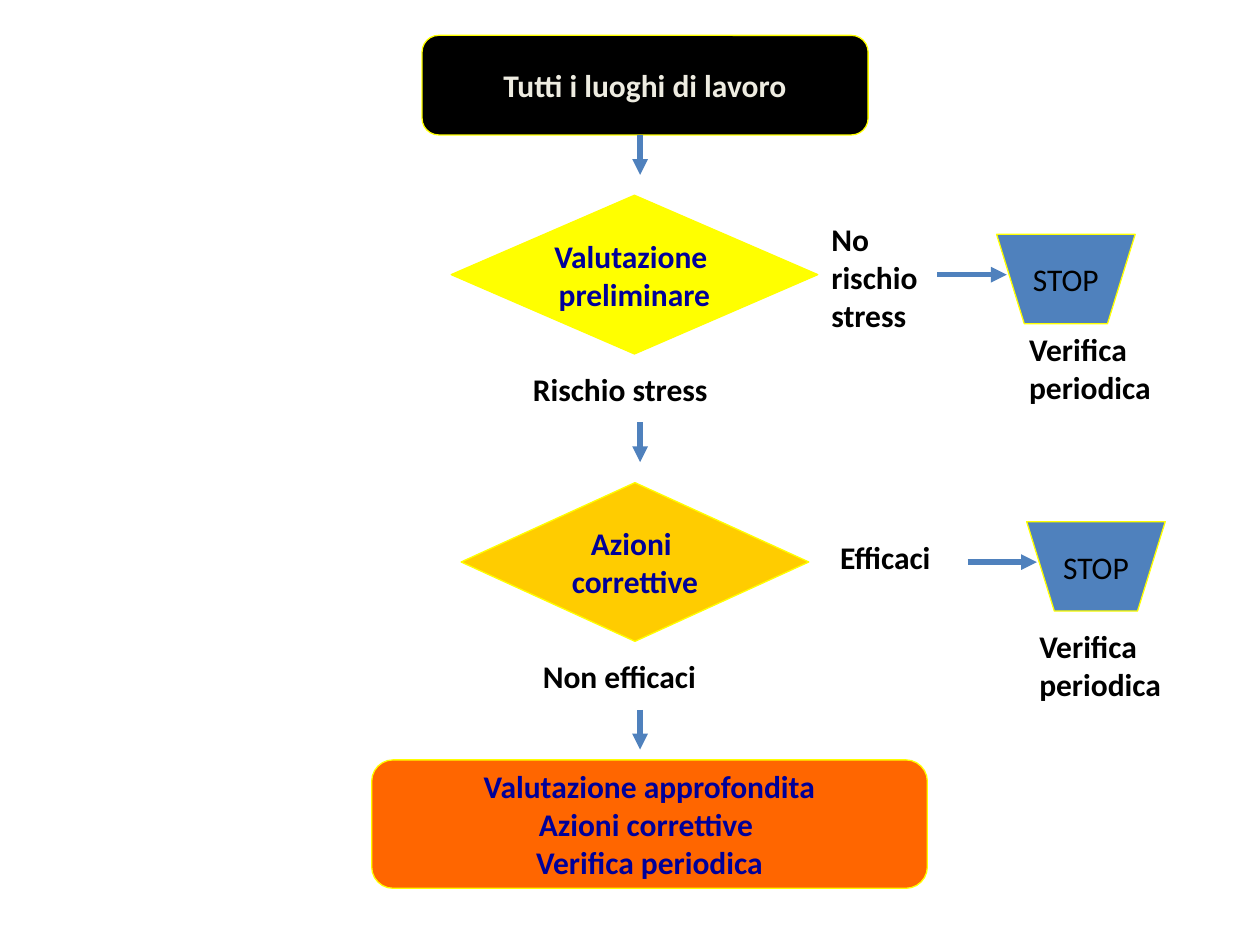
from lxml import etree
from pptx import Presentation
from pptx.dml.color import RGBColor
from pptx.enum.shapes import MSO_CONNECTOR as Connector, MSO_SHAPE as Shape
from pptx.enum.text import MSO_ANCHOR as Anchor, PP_ALIGN as Align
from pptx.oxml.ns import qn
from pptx.util import Pt

BLUE, YELLOW, NAVY, BLACK = "4F81BD", "FFFF00", "000099", "000000"
ROW_STEP = 164.2    # vertical distance between decision rows
ARROW_X = 365.8     # axis of the downward arrows
STOP_SHIFT = 17.2   # the second stop sits further right


def color(hex_string):
    return RGBColor.from_string(hex_string)


def format_text(text_frame, text, font_color, bold, align):
    text_frame.text = text
    for paragraph in text_frame.paragraphs:
        paragraph.alignment = align
        for run in paragraph.runs:
            run.font.name = "Calibri"
            run.font.size = Pt(18)
            run.font.bold = bold
            run.font.color.rgb = color(font_color)


def add_node(slide, kind, box, fill, text, font_color=NAVY, bold=True):
    shape = slide.shapes.add_shape(kind, *map(Pt, box))
    shape.shadow.inherit = False
    shape.fill.solid()
    shape.fill.fore_color.rgb = color(fill)
    shape.line.color.rgb = color(YELLOW)
    shape.line.width = Pt(0.75)
    shape.text_frame.word_wrap = False
    shape.text_frame.vertical_anchor = Anchor.MIDDLE
    format_text(shape.text_frame, text, font_color, bold, Align.CENTER)


def add_label(slide, box, text):
    text_box = slide.shapes.add_textbox(*map(Pt, box))
    text_box.text_frame.word_wrap = True
    format_text(text_box.text_frame, text, BLACK, True, Align.LEFT)


def add_arrow(slide, *ends):
    arrow = slide.shapes.add_connector(Connector.STRAIGHT, *map(Pt, ends))
    arrow.line.color.rgb = color(BLUE)
    arrow.line.width = Pt(3)
    etree.SubElement(arrow.line._get_or_add_ln(), qn("a:tailEnd"), type="triangle")
    etree.SubElement(arrow._element.spPr, qn("a:effectLst"))


def main():
    presentation = Presentation()
    presentation.slide_width, presentation.slide_height = Pt(720), Pt(540)
    slide = presentation.slides.add_slide(presentation.slide_layouts[6])

    # Start and final step
    add_node(slide, Shape.FLOWCHART_ALTERNATE_PROCESS, (241.2, 20.2, 254.9, 56.9),
             BLACK, "Tutti i luoghi di lavoro", "EEECE1")
    add_node(slide, Shape.FLOWCHART_ALTERNATE_PROCESS, (212.4, 434.2, 317.5, 73.4),
             "FF6600", "Valutazione approfondita\nAzioni correttive \nVerifica periodica")

    # Decisions
    add_node(slide, Shape.FLOWCHART_DECISION, (257.8, 111.6, 209.5, 90.7),
             YELLOW, "Valutazione \npreliminare")
    add_node(slide, Shape.FLOWCHART_DECISION, (263.5, 111.6 + ROW_STEP, 198.7, 90.7),
             "FFCC00", "Azioni \ncorrettive")

    # Arrows down the main flow
    for row in range(3):
        top = 77.2 + row * ROW_STEP
        add_arrow(slide, ARROW_X, top, ARROW_X, top + 22.7)

    # Stop branches
    for row in range(2):
        right, down = row * STOP_SHIFT, row * ROW_STEP
        add_arrow(slide, 535.7 + right, 157 + down, 575.3 + right, 157 + down)
        add_node(slide, Shape.FLOWCHART_MANUAL_OPERATION,
                 (569.5 + right, 133.9 + down, 79.2, 51.1), BLUE, "STOP", BLACK, False)

    # Outcome labels
    for box, text in [
        ((468, 122.4, 79.2, 72), "No rischio stress"),
        ((297.4, 207.8, 147.6, 28.8), "Rischio stress"),
        ((473, 303.8, 85, 28.8), "Efficaci"),
        ((303.1, 372.2, 136, 28.8), "Non efficaci"),
        ((581, 185, 113, 50.4), "Verifica periodica"),
        ((586.8, 355, 113, 50.4), "Verifica periodica"),
    ]:
        add_label(slide, box, text)

    presentation.save("out.pptx")


if __name__ == "__main__":
    main()
